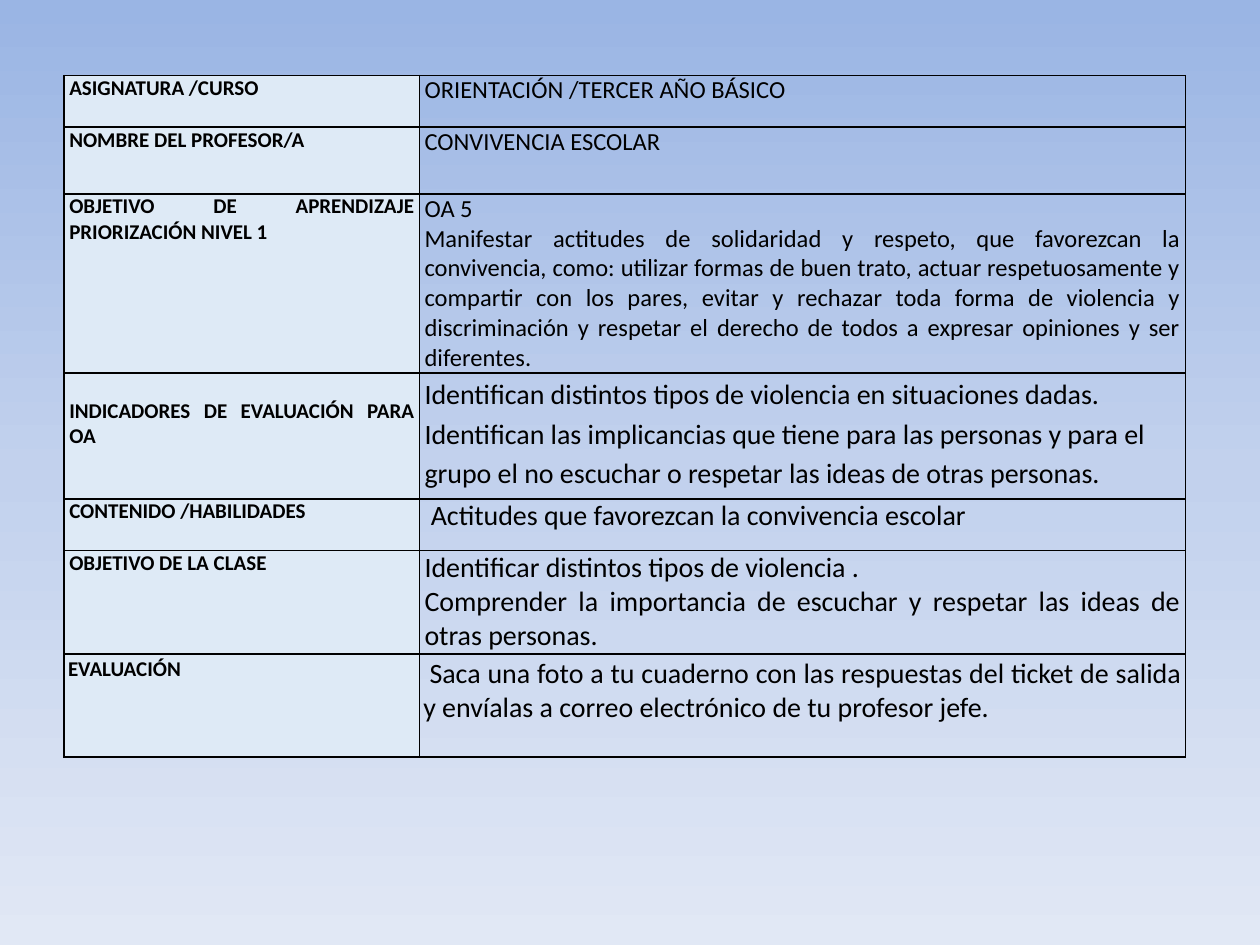
from lxml import etree
from pptx import Presentation, oxml
from pptx import util as u
from pptx.dml import color
from pptx.enum import text
from pptx.oxml import ns

COLORS = {"ink": "000000", "label": "DEEAF6",
          "sky": "9AB5E4", "mist": "C2D1ED", "pale": "E1E8F5"}
COLUMNS = [2.82, 6.08]
JUSTIFY, LEFT = text.PP_ALIGN.JUSTIFY, text.PP_ALIGN.LEFT
ROWS = [
    dict(height=0.41, label="ASIGNATURA /CURSO", size=14,
         body=["ORIENTACIÓN /TERCER AÑO BÁSICO"]),
    dict(height=0.53, label="NOMBRE DEL PROFESOR/A", size=14,
         body=["CONVIVENCIA ESCOLAR"]),
    dict(height=1.23, label="OBJETIVO DE APRENDIZAJE PRIORIZACIÓN NIVEL 1", size=14,
         body=["OA 5",
               "Manifestar actitudes de solidaridad y respeto, que favorezcan la "
               "convivencia, como: utilizar formas de buen trato, actuar "
               "respetuosamente y compartir con los pares, evitar y rechazar toda "
               "forma de violencia y discriminación y respetar el derecho de todos "
               "a expresar opiniones y ser diferentes."]),
    dict(height=1, label="INDICADORES DE EVALUACIÓN PARA OA", label_top=0.2, size=16,
         align=LEFT, spacing=1.15,
         body=["Identifican distintos tipos de violencia en situaciones dadas.",
               "Identifican las implicancias que tiene para las personas y para el "
               "grupo el no escuchar o respetar las ideas de otras personas."]),
    dict(height=0.41, label="CONTENIDO /HABILIDADES", size=16, indent=0.05,
         body=["Actitudes que favorezcan la convivencia escolar"]),
    dict(height=0.82, label="OBJETIVO DE LA CLASE", size=16,
         body=["Identificar distintos tipos de violencia .",
               "Comprender la importancia de escuchar y respetar las ideas de "
               "otras personas."]),
    dict(height=0.82, label="EVALUACIÓN", size=16, indent=0.05, side=0.03, top=0.02,
         body=["Saca una foto a tu cuaderno con las respuestas del ticket de salida "
               "y envíalas a correo electrónico de tu profesor jefe."]),
]


def set_background(page):
    """Fill the page with a vertical three-stop gradient."""
    stops = "".join(
        f'<a:gs pos="{place * 1000}"><a:srgbClr val="{COLORS[name]}"/></a:gs>'
        for place, name in [(0, "sky"), (50, "mist"), (100, "pale")])
    background = oxml.parse_xml(
        f'<p:bg {ns.nsdecls("p", "a")}><p:bgPr><a:gradFill rotWithShape="1">'
        f'<a:gsLst>{stops}</a:gsLst><a:lin ang="5400000" scaled="0"/></a:gradFill>'
        '<a:effectLst/></p:bgPr></p:bg>')
    page.element.cSld.insert(0, background)


def add_borders(cell):
    """Draw a thin line on the four sides of a cell."""
    properties = cell._tc.get_or_add_tcPr()
    for index, side in enumerate(["lnL", "lnR", "lnT", "lnB"]):
        line = etree.Element(ns.qn(f"a:{side}"), w=str(u.Pt(1)))
        fill = etree.SubElement(line, ns.qn("a:solidFill"))
        etree.SubElement(fill, ns.qn("a:srgbClr"), val=COLORS["ink"])
        properties.insert(index, line)


def fill_cell(cell, lines, size, bold=False, align=JUSTIFY, spacing=None,
              indent=0, side=0.04, top=0, bottom=0):
    """Write the lines in a cell and set its margins and borders."""
    cell.margin_left = cell.margin_right = u.Inches(side)
    cell.margin_top, cell.margin_bottom = u.Inches(top), u.Inches(bottom)
    frame = cell.text_frame
    for index, line in enumerate(lines):
        para = frame.add_paragraph() if index else frame.paragraphs[0]
        para.alignment = align
        if spacing:
            para.line_spacing = spacing
        if indent:
            para._p.get_or_add_pPr().set("indent", str(u.Inches(indent)))
        span = para.add_run()
        span.text = line
        span.font.name = "Calibri"
        span.font.size = u.Pt(size)
        span.font.bold = bold
        span.font.color.rgb = color.RGBColor.from_string(COLORS["ink"])
    add_borders(cell)


def add_plan_table(page, left, top, width, height):
    """Place the lesson plan table in the given box."""
    table = page.shapes.add_table(len(ROWS), len(COLUMNS), u.Inches(left), u.Inches(top),
                                  u.Inches(width), u.Inches(height)).table
    table.first_row = table.horz_banding = False
    for column, share in zip(table.columns, COLUMNS):
        column.width = u.Inches(width * share / sum(COLUMNS))
    for row, plan in zip(table.rows, ROWS):
        row.height = u.Inches(plan["height"])
        label, body = row.cells
        side, edge = plan.get("side", 0.04), plan.get("top", 0)
        label.fill.solid()
        label.fill.fore_color.rgb = color.RGBColor.from_string(COLORS["label"])
        body.fill.background()
        fill_cell(label, [plan["label"]], 12, bold=True, side=side,
                  top=plan.get("label_top", edge), bottom=edge)
        fill_cell(body, plan["body"], plan["size"], align=plan.get("align", JUSTIFY),
                  spacing=plan.get("spacing"), indent=plan.get("indent", 0),
                  side=side, top=edge, bottom=edge)


def main():
    """Build the deck and save it."""
    deck = Presentation()
    deck.slide_width, deck.slide_height = u.Inches(10), u.Inches(7.5)
    page = deck.slides.add_slide(deck.slide_layouts[6])
    set_background(page)
    add_plan_table(page, 0.51, 0.6, 8.9, 5.39)
    deck.save("out.pptx")


if __name__ == "__main__":
    main()
